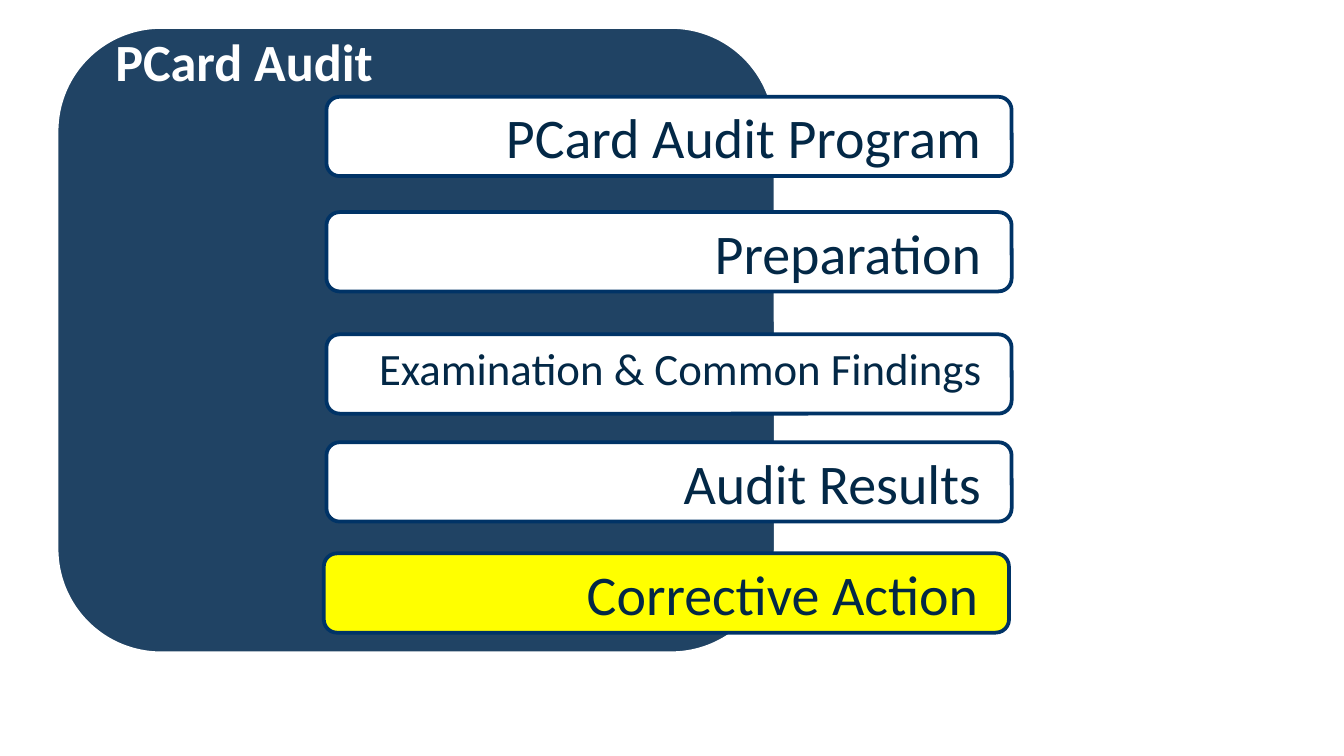
from pptx import Presentation
from pptx.dml.color import RGBColor
from pptx.enum.shapes import MSO_SHAPE
from pptx.enum.text import MSO_ANCHOR, PP_ALIGN
from pptx.util import Cm, Pt

NAVY = RGBColor(0x20, 0x43, 0x64)
EDGE = RGBColor(0x00, 0x33, 0x66)
INK = RGBColor(0x03, 0x28, 0x46)
WHITE = RGBColor(0xFF, 0xFF, 0xFF)
YELLOW = RGBColor(0xFF, 0xFF, 0x00)

TITLE = "PCard Audit"
# label, left, top (cm), text size (pt), bottom inset (cm), fill
STEPS = [
    ("PCard Audit Program", 6.17, 1.83, 30, 0, WHITE),
    ("Preparation", 6.17, 4.01, 30, 0, WHITE),
    ("Examination & Common Findings", 6.17, 6.32, 24, 0.23, WHITE),
    ("Audit Results", 6.17, 8.36, 30, 0, WHITE),
    ("Corrective Action", 6.12, 10.46, 30, 0, YELLOW),
]
STEP_W, STEP_H = 12.95, 1.5


def add_box(slide, kind, left, top, width, height, fill, line):
    box = slide.shapes.add_shape(kind, Cm(left), Cm(top), Cm(width), Cm(height))
    box.shadow.inherit = False
    box.fill.solid()
    box.fill.fore_color.rgb = fill
    box.line.color.rgb = line
    box.line.width = Pt(2)
    return box


def write(frame, text, size, color, bold=False):
    frame.word_wrap = True
    frame.text = text
    font = frame.paragraphs[0].runs[0].font
    font.name = "Calibri"
    font.size = Pt(size)
    font.bold = bold
    font.color.rgb = color


def add_step(slide, label, left, top, size, inset, fill):
    box = add_box(slide, MSO_SHAPE.ROUNDED_RECTANGLE,
                  left, top, STEP_W, STEP_H, fill, EDGE)
    frame = box.text_frame
    frame.margin_left = frame.margin_right = Cm(0.5)
    frame.margin_top = 0
    frame.margin_bottom = Cm(inset)
    frame.vertical_anchor = MSO_ANCHOR.MIDDLE
    write(frame, label, size, INK)
    frame.paragraphs[0].alignment = PP_ALIGN.RIGHT


def main():
    deck = Presentation()
    deck.slide_width, deck.slide_height = Cm(25.4), Cm(14.29)
    slide = deck.slides.add_slide(deck.slide_layouts[6])

    add_box(slide, MSO_SHAPE.FLOWCHART_ALTERNATE_PROCESS,
            1.07, 0.51, 13.59, 11.84, NAVY, WHITE)
    title = slide.shapes.add_textbox(Cm(1.93), Cm(0.43), Cm(12.7), Cm(1.45))
    write(title.text_frame, TITLE, 28, WHITE, bold=True)
    for step in STEPS:
        add_step(slide, *step)

    deck.save("out.pptx")


if __name__ == "__main__":
    main()
